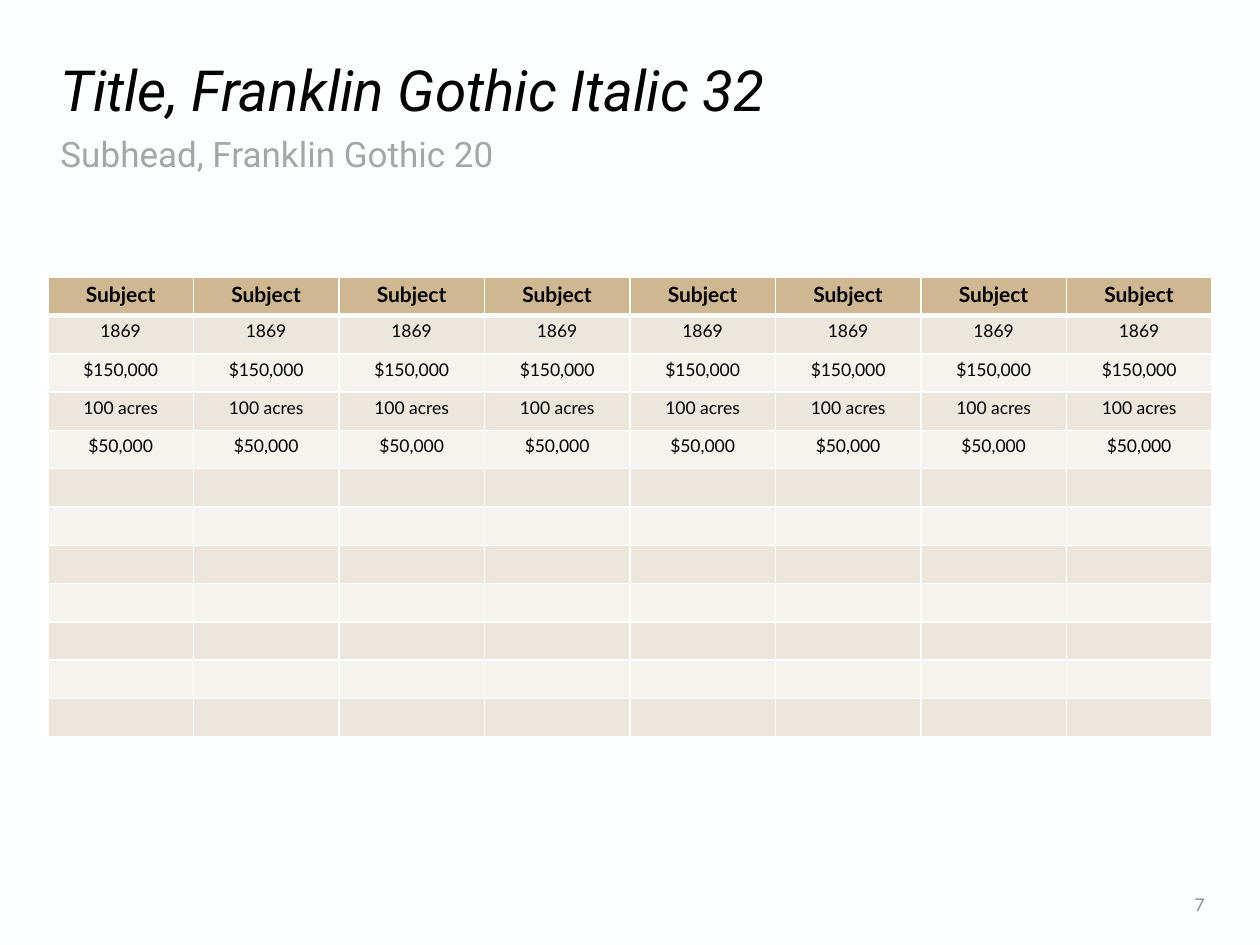
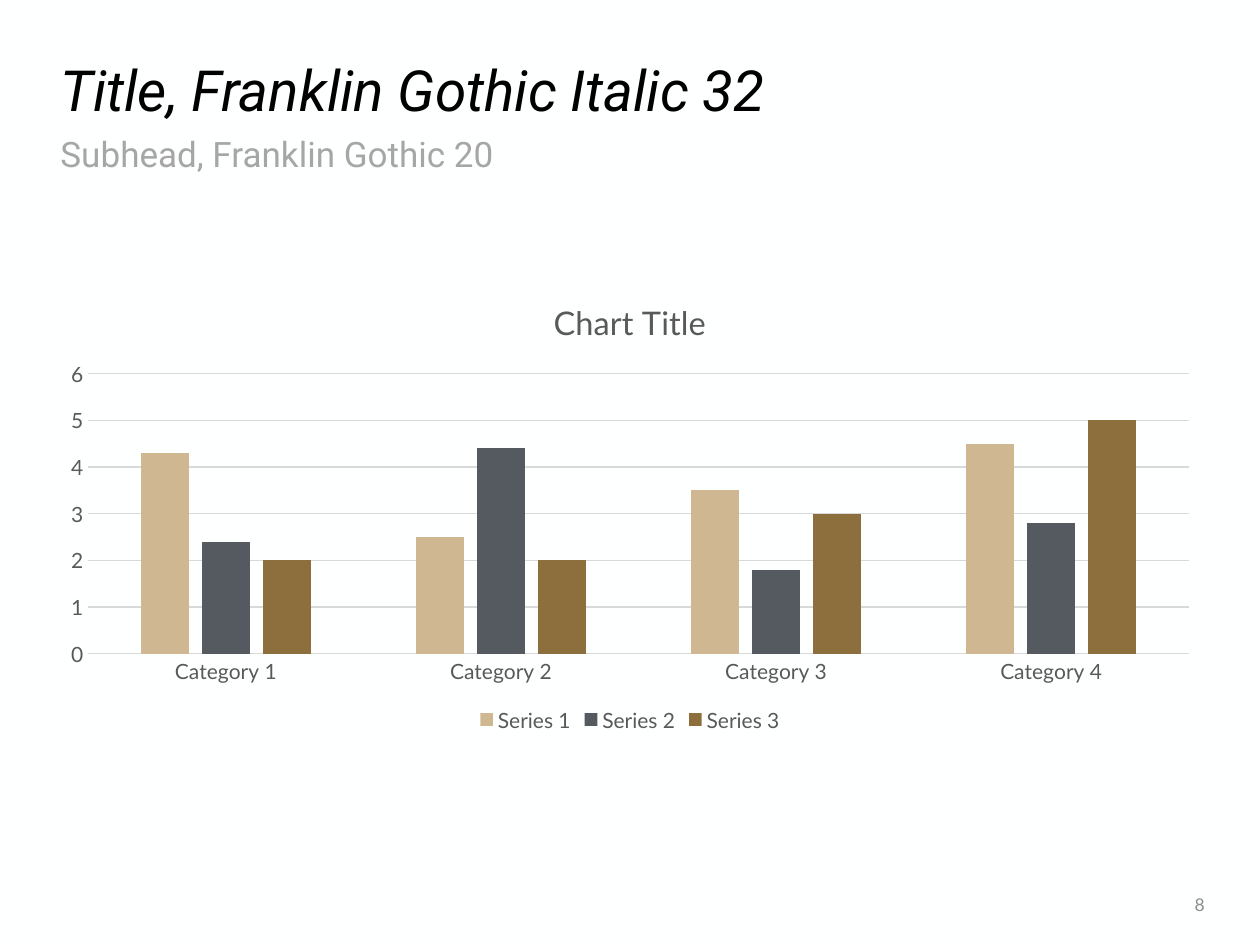
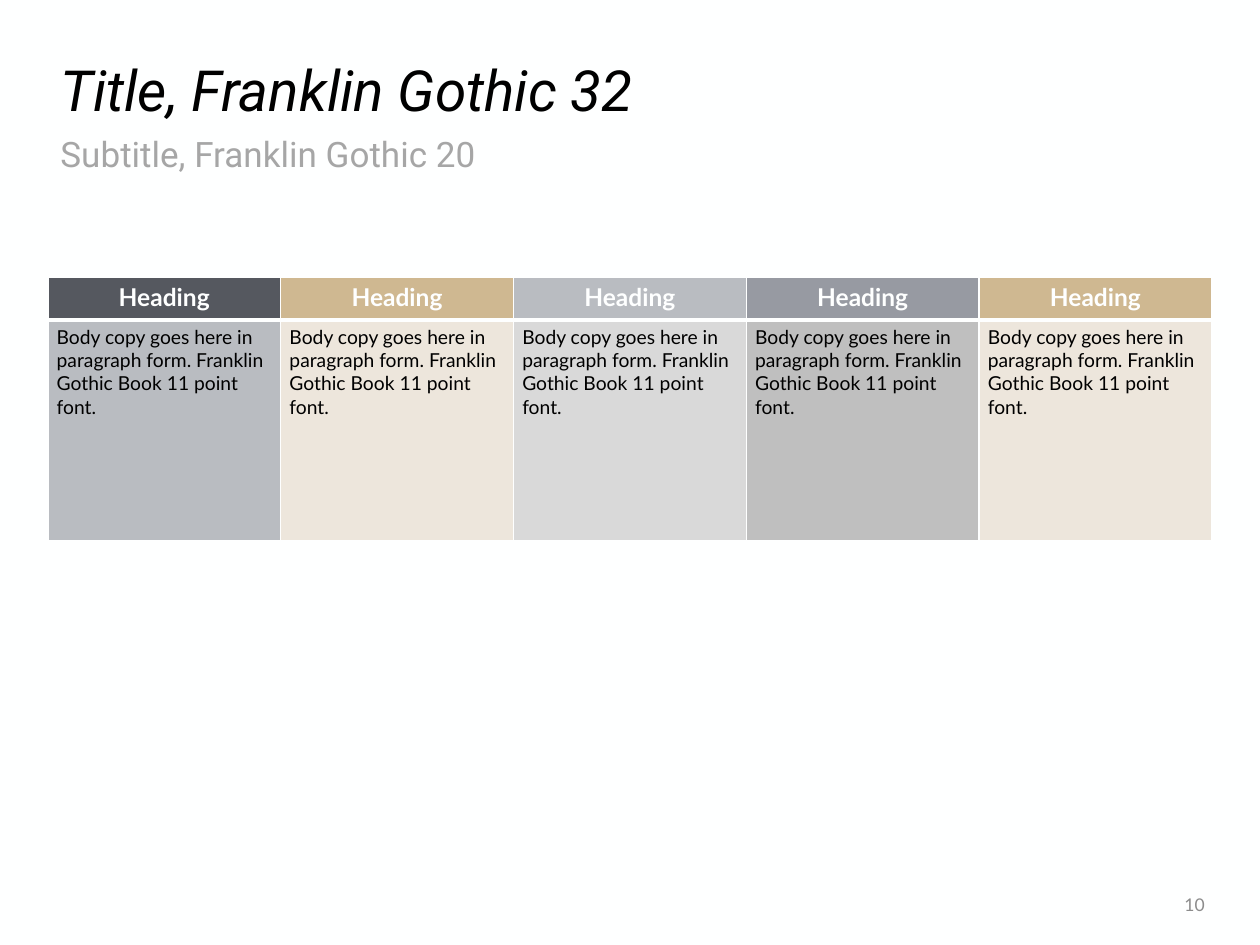
from lxml import etree
from pptx import Presentation
from pptx import util as u
from pptx.chart.data import CategoryChartData
from pptx.dml.color import RGBColor
from pptx.enum import chart as ch
from pptx.enum import text
from pptx.oxml.ns import qn

# Content
COLORS = dict(
    paper="FEFFFF", ink="000000", gold="CFB891", cream="EDE6DC", ivory="F6F3EE",
    slate="55585F", charcoal="555960", bronze="8D6F3D", silver="B9BCC1",
    steel="979AA2", light="D9D9D9", mid="BFBFBF", subhead="A6A6A6",
    number="8C8C8C", label="595959",
)
HEAD_FONT, BODY_FONT = "Roboto", "Lato"

TITLE = "Title, Franklin Gothic Italic 32"
SUBHEAD = "Subhead, Franklin Gothic 20"

SUBJECT_COLS, SUBJECT_ROWS = 8, 12
SUBJECT_LINES = ["Subject", "1869", "$150,000", "100 acres", "$50,000"]

CATEGORIES = [f"Category {n}" for n in range(1, 5)]
SERIES = [
    ("Series 1", (4.3, 2.5, 3.5, 4.5), "gold"),
    ("Series 2", (2.4, 4.4, 1.8, 2.8), "charcoal"),
    ("Series 3", (2, 2, 3, 5), "bronze"),
]

BODY_COPY = ("Body copy goes here in paragraph form. "
             "Franklin Gothic Book 11 point font.")
HEADING_FILLS = ["slate", "gold", "silver", "steel", "gold"]
COPY_FILLS = ["silver", "cream", "light", "mid", "cream"]

# Shared layout, in inches
WIDTH, HEIGHT, MARGIN = 10, 7.5, 0.38
CONTENT_W = WIDTH - 2 * MARGIN
TITLE_BOX = (MARGIN, 0.42, CONTENT_W, 0.64)
SUBHEAD_BOX = (MARGIN, 1.04, CONTENT_W, 0.4)
NUMBER_BOX = (8.66, 7, 1, 0.35)
CONTENT_TOP, CONTENT_H = 2.2, 3.65


def rgb(name):
    return RGBColor.from_string(COLORS[name])


def inches(box):
    return [u.Inches(v) for v in box]


def style_font(font, size, color, name=BODY_FONT, bold=False, italic=False):
    font.size, font.name = u.Pt(size), name
    font.bold, font.italic = bold, italic
    font.color.rgb = rgb(color)


def write(tf, words, align=text.PP_ALIGN.LEFT, anchor=text.MSO_ANCHOR.TOP,
          spacing=1.0, **font):
    tf.word_wrap = True
    tf.vertical_anchor = anchor
    p = tf.paragraphs[0]
    p.alignment, p.line_spacing, p.space_before = align, spacing, u.Pt(0)
    if words:
        r = p.add_run()
        r.text = words
        style_font(r.font, **font)
    else:  # an empty cell keeps its row height only with a small font
        end = etree.SubElement(p._p, qn("a:endParaRPr"))
        end.set("sz", str(font["size"] * 100))


def place(sp, box):
    sp.left, sp.top, sp.width, sp.height = inches(box)


def add_slide(prs, title, subhead, number):
    s = prs.slides.add_slide(prs.slide_layouts[1])
    head, body = s.shapes.title, s.placeholders[1]
    for sp, box in ((head, TITLE_BOX), (body, SUBHEAD_BOX)):
        place(sp, box)
        sp.text_frame.auto_size = text.MSO_AUTO_SIZE.NONE
    write(head.text_frame, title, anchor=text.MSO_ANCHOR.MIDDLE, spacing=0.9,
          size=32.4, color="ink", name=HEAD_FONT, italic=True)

    # Subhead without the template's bullet
    pPr = body.text_frame.paragraphs[0]._p.get_or_add_pPr()
    pPr.set("marL", "0")
    pPr.set("indent", "0")
    etree.SubElement(pPr, qn("a:buNone"))
    write(body.text_frame, subhead, spacing=0.9, size=20, color="subhead",
          name=HEAD_FONT)

    # Slide number
    sp = s.shapes.add_textbox(*inches(NUMBER_BOX))
    write(sp.text_frame, str(number), align=text.PP_ALIGN.RIGHT,
          anchor=text.MSO_ANCHOR.MIDDLE, size=10, color="number")
    return s


def set_borders(cell, **widths):
    tcPr = cell._tc.get_or_add_tcPr()
    for side in "LRTB":
        ln = etree.SubElement(tcPr, qn(f"a:ln{side}"))
        ln.set("w", str(u.Pt(widths.get(side, 1))))
        fill = etree.SubElement(ln, qn("a:solidFill"))
        etree.SubElement(fill, qn("a:srgbClr")).set("val", COLORS["paper"])


def add_table(s, rows, fills, heights, head, body):
    """Rows of words and fills; head and body are the text formats."""
    cols = len(rows[0])
    box = (MARGIN, CONTENT_TOP, CONTENT_W, sum(heights))
    table = s.shapes.add_table(len(rows), cols, *inches(box)).table
    for col in table.columns:
        col.width = u.Inches(CONTENT_W / cols)
    for i, (words, colors, height) in enumerate(zip(rows, fills, heights)):
        table.rows[i].height = u.Inches(height)
        rule = {0: {"B": 3}, 1: {"T": 3}}.get(i, {})
        for j, (word, color) in enumerate(zip(words, colors)):
            cell = table.cell(i, j)
            cell.margin_left = cell.margin_right = u.Inches(0.07)
            cell.margin_top = cell.margin_bottom = u.Inches(0.04)
            set_borders(cell, **rule)
            cell.fill.solid()
            cell.fill.fore_color.rgb = rgb(color)
            write(cell.text_frame, word, **(body if i else head))


def add_column_chart(s):
    data = CategoryChartData()
    data.categories = CATEGORIES
    for name, values, _ in SERIES:
        data.add_series(name, values)
    box = (MARGIN, CONTENT_TOP, CONTENT_W, CONTENT_H)
    chart = s.shapes.add_chart(ch.XL_CHART_TYPE.COLUMN_CLUSTERED,
                               *inches(box), data).chart
    style_font(chart.font, 10, "ink")

    # Title and legend
    chart.has_title = True
    write(chart.chart_title.text_frame, "Chart Title",
          align=text.PP_ALIGN.CENTER, size=18.6, color="label")
    chart.chart_title.include_in_layout = False
    chart.has_legend = True
    chart.legend.position = ch.XL_LEGEND_POSITION.BOTTOM
    chart.legend.include_in_layout = False
    style_font(chart.legend.font, 12, "label")

    # Columns
    plot = chart.plots[0]
    plot.gap_width, plot.overlap, plot.vary_by_categories = 219, -27, False
    for series, (_, _, color) in zip(plot.series, SERIES):
        series.format.fill.solid()
        series.format.fill.fore_color.rgb = rgb(color)

    # Axes
    cat, val = chart.category_axis, chart.value_axis
    for axis in (cat, val):
        axis.major_tick_mark = axis.minor_tick_mark = ch.XL_TICK_MARK.NONE
        style_font(axis.tick_labels.font, 12, "label")
    val.minimum_scale, val.maximum_scale, val.major_unit = 0, 6, 1
    val.has_major_gridlines = True
    val.format.line.fill.background()
    for line in (cat.format.line, val.major_gridlines.format.line):
        line.width = u.Pt(0.75)
        line.color.rgb = rgb("light")


def main():
    prs = Presentation()
    prs.slide_width, prs.slide_height = inches((WIDTH, HEIGHT))
    paper = prs.slide_master.background.fill
    paper.solid()
    paper.fore_color.rgb = rgb("paper")
    center = text.PP_ALIGN.CENTER

    # Subject table
    s = add_slide(prs, TITLE, SUBHEAD, 7)
    blanks = [""] * (SUBJECT_ROWS - len(SUBJECT_LINES))
    rows = [[line] * SUBJECT_COLS for line in SUBJECT_LINES + blanks]
    bands = ["gold"] + [("ivory", "cream")[i % 2] for i in range(1, SUBJECT_ROWS)]
    add_table(s, rows, [[band] * SUBJECT_COLS for band in bands],
              [CONTENT_H / SUBJECT_ROWS] * SUBJECT_ROWS,
              head=dict(align=center, size=12, color="ink", bold=True),
              body=dict(align=center, size=10, color="ink"))

    # Column chart
    add_column_chart(add_slide(prs, TITLE, SUBHEAD, 8))

    # Heading table
    s = add_slide(prs, "Title, Franklin Gothic 32",
                  "Subtitle, Franklin Gothic 20", 10)
    cols = len(HEADING_FILLS)
    add_table(s, [["Heading"] * cols, [BODY_COPY] * cols],
              [HEADING_FILLS, COPY_FILLS], [0.34, 1.75],
              head=dict(align=center, size=14, color="paper", bold=True),
              body=dict(size=11, color="ink"))

    prs.save("out.pptx")


if __name__ == "__main__":
    main()
